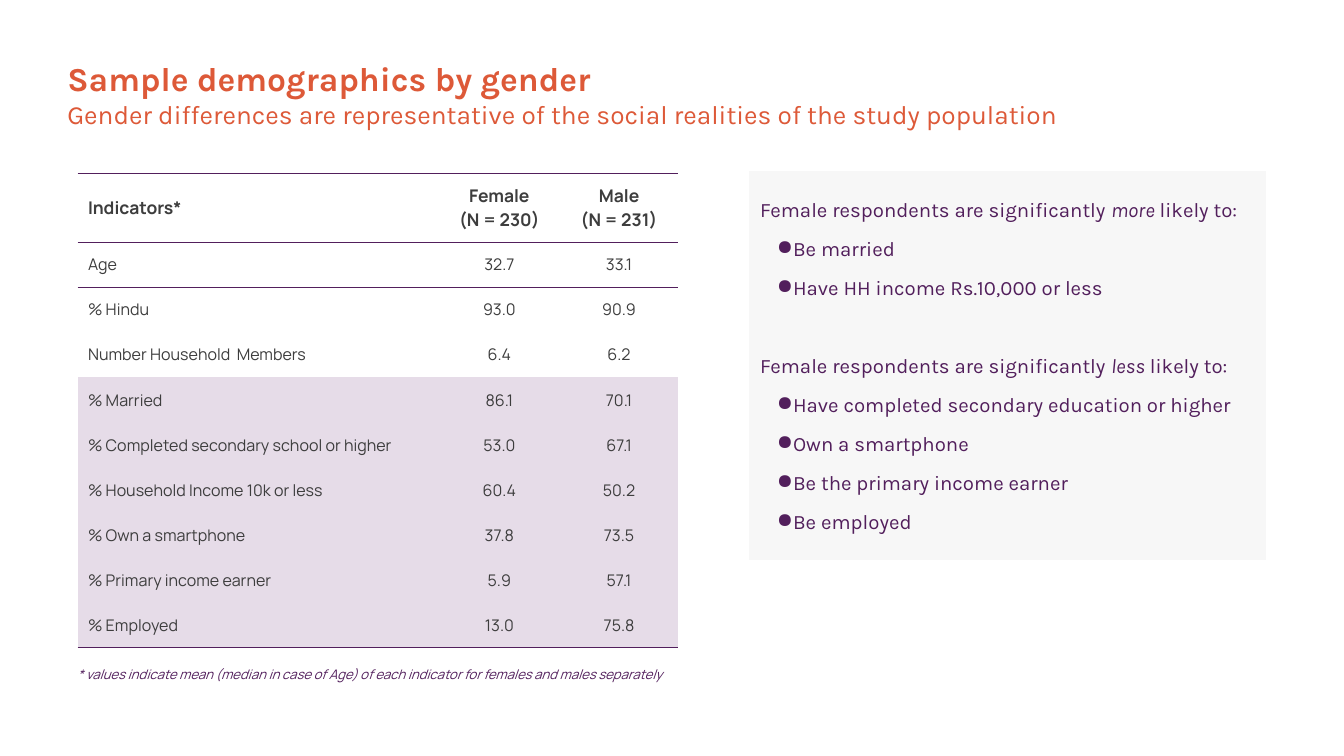
from lxml import etree
from pptx import Presentation
from pptx.dml.color import RGBColor
from pptx.enum.shapes import MSO_SHAPE
from pptx.enum.text import MSO_ANCHOR, PP_ALIGN
from pptx.oxml.ns import qn
from pptx.util import Cm, Pt

RECT = MSO_SHAPE.RECTANGLE
TOP, MIDDLE = MSO_ANCHOR.TOP, MSO_ANCHOR.MIDDLE
LEFT, CENTER = PP_ALIGN.LEFT, PP_ALIGN.CENTER

ORANGE, PURPLE, GREY = "DD5938", "521F5C", "3D3D3D"
LILAC, PALE = "E6DCE8", "F7F7F7"
HEADING, BODY = "Karla", "Manrope"
NO_STYLE = "{2D5ABB26-0587-4C30-8999-92F81FD0307C}"
PAD = 0.25

TITLE = "Sample demographics by gender"
SUBTITLE = ("Gender differences are representative of the social realities "
            "of the study population")
NOTE = ("* values indicate mean (median in case of Age) of each indicator "
        "for females and males separately")
HEADER = [["Indicators*"], ["Female", "(N = 230)"], ["Male", "(N = 231)"]]
INDICATORS = [
    ("Age", "32.7", "33.1"),
    ("% Hindu", "93.0", "90.9"),
    ("Number Household  Members", "6.4", "6.2"),
    ("% Married", "86.1", "70.1"),
    ("% Completed secondary school or higher", "53.0", "67.1"),
    ("% Household Income 10k or less", "60.4", "50.2"),
    ("% Own a smartphone", "37.8", "73.5"),
    ("% Primary income earner", "5.9", "57.1"),
    ("% Employed", "13.0", "75.8"),
]
FIRST_SHADED = 4
COL_WIDTHS = [8.74, 2.92, 2.87]
HEADER_HEIGHT, ROW_HEIGHT = 1.67, 1.09
FINDINGS = [
    ("more", ["Be married", "Have HH income Rs.10,000 or less"]),
    ("less", ["Have completed secondary education or higher", "Own a smartphone",
              "Be the primary income earner", "Be employed"]),
]


def rgb(color):
    return RGBColor.from_string(color)


def add_run(p, text, size, font, color, bold=False, italic=False):
    r = p.add_run()
    r.text = text
    f = r.font
    f.size, f.name, f.bold, f.italic = Pt(size), font, bold, italic
    f.color.rgb = rgb(color)


def next_paragraph(tf):
    """Return the unused first paragraph, or a new one."""
    first = tf.paragraphs[0]
    return tf.add_paragraph() if first.runs else first


def add_line(tf, text, align=LEFT, **fmt):
    p = next_paragraph(tf)
    p.alignment = align
    add_run(p, text, **fmt)


def set_frame(tf, pad, anchor):
    tf.word_wrap = True
    tf.vertical_anchor = anchor
    tf.margin_left = tf.margin_right = tf.margin_top = tf.margin_bottom = Cm(pad)


def add_text_box(slide, x, y, w, h, pad, anchor):
    tf = slide.shapes.add_textbox(Cm(x), Cm(y), Cm(w), Cm(h)).text_frame
    set_frame(tf, pad, anchor)
    return tf


def set_borders(cell, *sides):
    """Draw thin purple rules on the given sides, listed in schema order."""
    for i, side in enumerate(sides):
        ln = etree.Element(qn("a:" + side), w=str(Pt(0.75)))
        fill = etree.SubElement(ln, qn("a:solidFill"))
        etree.SubElement(fill, qn("a:srgbClr"), val=PURPLE)
        cell._tc.get_or_add_tcPr().insert(i, ln)


def set_indent(p, indent, bullet=False):
    pPr = p._p.get_or_add_pPr()
    pPr.set("marL", str(Cm(0.48)))
    pPr.set("indent", str(Cm(indent)))
    if bullet:
        color = etree.SubElement(pPr, qn("a:buClr"))
        etree.SubElement(color, qn("a:srgbClr"), val=PURPLE)
        etree.SubElement(pPr, qn("a:buChar"), char="●")


def add_indicator_table(slide):
    rows = [HEADER] + [[[text] for text in row] for row in INDICATORS]
    heights = [HEADER_HEIGHT] + [ROW_HEIGHT] * len(INDICATORS)
    frame = slide.shapes.add_table(len(rows), len(COL_WIDTHS), Cm(1.88), Cm(4.19),
                                   Cm(sum(COL_WIDTHS)), Cm(sum(heights)))
    table = frame.table
    table.first_row = table.horz_banding = False
    table._tbl.tblPr.find(qn("a:tableStyleId")).text = NO_STYLE
    for column, width in zip(table.columns, COL_WIDTHS):
        column.width = Cm(width)
    for i, (row, height) in enumerate(zip(rows, heights)):
        table.rows[i].height = Cm(height)
        for j, lines in enumerate(row):
            cell = table.cell(i, j)
            cell.vertical_anchor = MIDDLE
            cell.margin_left = cell.margin_right = Cm(PAD)
            cell.margin_top = cell.margin_bottom = Cm(PAD)
            for text in lines:
                add_line(cell.text_frame, text, align=CENTER if j else LEFT,
                         size=11 if i else 12, font=BODY, color=GREY, bold=i == 0)
            if i >= FIRST_SHADED:
                cell.fill.solid()
                cell.fill.fore_color.rgb = rgb(LILAC)
            else:
                cell.fill.background()
            if i == 0:
                set_borders(cell, "lnT", "lnB")
            elif i == 1:
                set_borders(cell, "lnT")
            elif i == len(rows) - 1:
                set_borders(cell, "lnB")


def add_findings(slide):
    sp = slide.shapes.add_shape(RECT, Cm(18.14), Cm(4.14), Cm(12.47), Cm(9.4))
    sp.shadow.inherit = False
    sp.fill.solid()
    sp.fill.fore_color.rgb = sp.line.color.rgb = rgb(PALE)
    sp.line.width = Pt(0.75)
    tf = sp.text_frame
    set_frame(tf, PAD, MIDDLE)
    fmt = dict(size=14, font=HEADING, color=PURPLE)
    for i, (degree, items) in enumerate(FINDINGS):
        p = next_paragraph(tf)
        p.alignment = LEFT
        set_indent(p, -0.48)
        if i:
            p.space_before = Pt(36.5)
        add_run(p, "Female respondents are significantly ", **fmt)
        add_run(p, degree, italic=True, **fmt)
        add_run(p, " likely to:", **fmt)
        for item in items:
            p = next_paragraph(tf)
            p.alignment = LEFT
            p.space_before = Pt(10)
            set_indent(p, -0.08, bullet=True)
            add_run(p, item, **fmt)
    p.space_after = Pt(10)


def main():
    prs = Presentation()
    prs.slide_width, prs.slide_height = Cm(32.51), Cm(18.29)
    slide = prs.slides.add_slide(prs.slide_layouts[6])
    add_indicator_table(slide)
    tf = add_text_box(slide, 1.63, 0.74, 29.26, 3.05, 0, MIDDLE)
    add_line(tf, TITLE, size=23, font=HEADING, color=ORANGE, bold=True)
    add_line(tf, SUBTITLE, size=18, font=HEADING, color=ORANGE)
    add_findings(slide)
    tf = add_text_box(slide, 1.63, 15.93, 15.01, 0.89, PAD, TOP)
    add_line(tf, NOTE, size=9, font=BODY, color=PURPLE, italic=True)
    prs.save("out.pptx")


if __name__ == "__main__":
    main()
